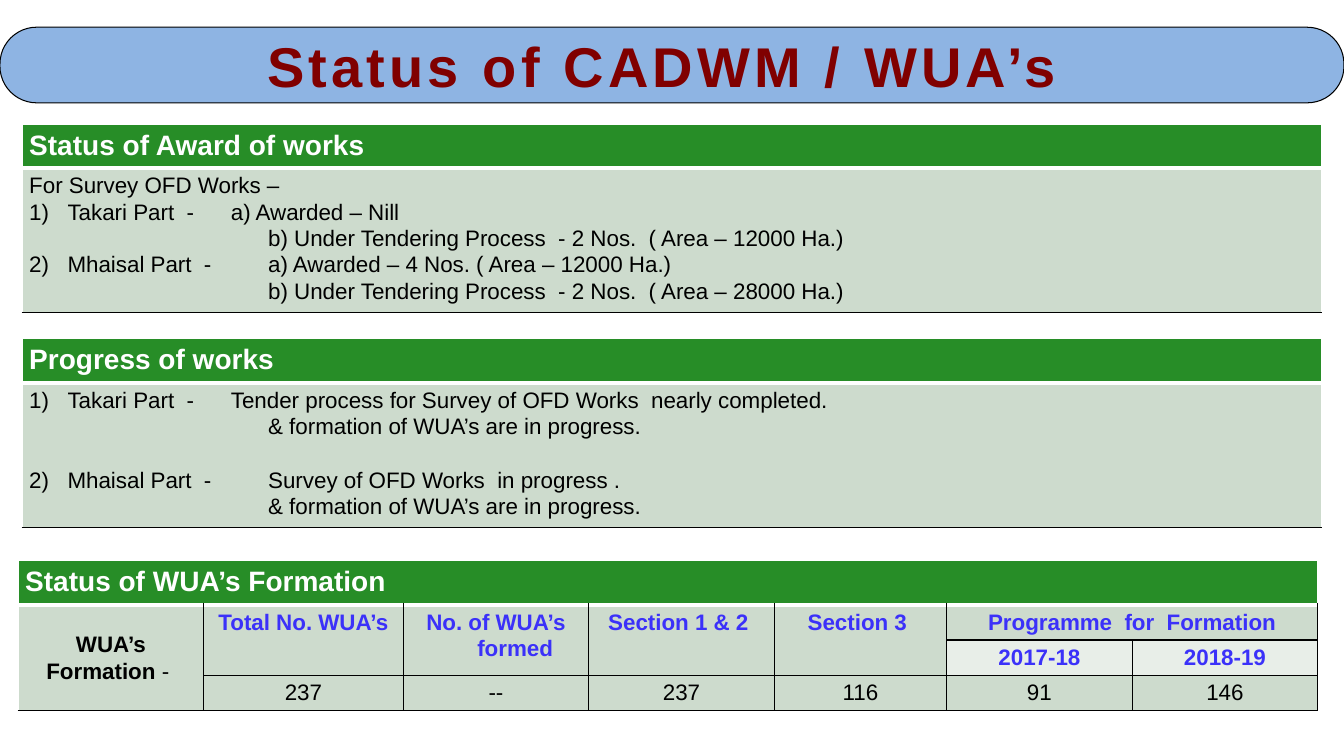
from lxml import etree
from pptx import Presentation
from pptx import util as u
from pptx.dml.color import RGBColor
from pptx.enum import shapes, text
from pptx.oxml import ns

COLOURS = {
    "banner": "8EB4E3", "title": "800000", "header": "278D27", "body": "CDDBCD",
    "years": "E8EEE8", "heading": "3B31F9", "black": "000000", "white": "FFFFFF",
}
FONT = "Arial"
HANG = 0.38        # hanging indent of numbered lines, inches
LINE_SPACING = 1.06
LINE = 19.5        # height of one body line, points
DETAIL = 2.37      # left edge of the detail lines, inches
HEADER_H = 0.44
ROW_H = 0.35
WHITE_GRID = {"L": ("white", 1), "R": ("white", 1), "T": ("white", 1), "B": ("white", 3)}
BLACK_GRID = {side: ("black", 1) for side in "LRTB"}
BODY_GRID = {**WHITE_GRID, "B": ("black", 1)}
LABEL_GRID = {**BODY_GRID, "R": ("black", 1)}


def colour(name):
    return RGBColor.from_string(COLOURS[name])


def style_run(run, size, ink, bold):
    font = run.font
    font.name, font.size, font.bold = FONT, u.Pt(size), bold
    font.color.rgb = colour(ink)


def style_paragraph(paragraph, size, ink, bold, align=None, left=HANG, hang=HANG):
    paragraph.alignment = align
    paragraph.line_spacing = LINE_SPACING
    props = paragraph._p.get_or_add_pPr()
    props.set("marL", str(u.Inches(left)))
    props.set("indent", str(-u.Inches(hang)))
    for run in paragraph.runs:
        style_run(run, size, ink, bold)


def number_and_tab(paragraph, number, tab):
    """Automatic number "n)" and one tab stop."""
    props = paragraph._p.get_or_add_pPr()
    etree.SubElement(props, ns.qn("a:buFont"), typeface="+mj-lt")
    etree.SubElement(props, ns.qn("a:buAutoNum"), type="arabicParenR", startAt=str(number))
    stops = etree.SubElement(props, ns.qn("a:tabLst"))
    etree.SubElement(stops, ns.qn("a:tab"), pos=str(u.Inches(tab)), algn="l")


def style_cell(cell, fill, grid):
    cell.margin_left = cell.margin_right = u.Inches(0.07)
    cell.margin_top = cell.margin_bottom = u.Inches(0.04)
    cell.fill.solid()
    cell.fill.fore_color.rgb = colour(fill)
    props = cell._tc.get_or_add_tcPr()
    for place, side in enumerate("LRTB"):
        ink, width = grid[side]
        border = etree.Element(ns.qn(f"a:ln{side}"), w=str(u.Pt(width)))
        solid = etree.SubElement(border, ns.qn("a:solidFill"))
        etree.SubElement(solid, ns.qn("a:srgbClr"), val=COLOURS[ink])
        props.insert(place, border)


def new_table(slide, box, heights, widths):
    left, top, width = box
    frame = slide.shapes.add_table(
        len(heights), len(widths), u.Inches(left), u.Inches(top),
        u.Inches(width), u.Inches(sum(heights)))
    table = frame.table
    table.horz_banding = False
    for row, height in zip(table.rows, heights):
        row.height = u.Inches(height)
    for column, share in zip(table.columns, widths):
        column.width = u.Inches(width * share / sum(widths))
    return table


def header_cell(cell, heading):
    cell.text_frame.text = heading
    style_paragraph(cell.text_frame.paragraphs[0], 20, "white", True)


def title_banner(slide, box, heading):
    banner = slide.shapes.add_shape(
        shapes.MSO_SHAPE.ROUNDED_RECTANGLE, *(u.Inches(length) for length in box))
    banner.adjustments[0] = 0.485
    banner.shadow.inherit = False
    banner.fill.solid()
    banner.fill.fore_color.rgb = colour("banner")
    banner.line.color.rgb = colour("black")
    banner.line.width = u.Pt(0.75)
    frame = banner.text_frame
    frame.text = heading
    frame.vertical_anchor = text.MSO_ANCHOR.MIDDLE
    frame.paragraphs[0].alignment = text.PP_ALIGN.CENTER
    run = frame.paragraphs[0].runs[0]
    style_run(run, 40, "title", True)
    run.font._element.set("spc", "300")


def works_table(slide, box, heading, lines):
    """lines: (wording, item number, left edge or tab stop, space before)."""
    table = new_table(slide, box, [HEADER_H, 1.43], [1])
    header, body = table.cell(0, 0), table.cell(1, 0)
    style_cell(header, "header", WHITE_GRID)
    header_cell(header, heading)
    style_cell(body, "body", BODY_GRID)
    body.text_frame.text = "\n".join(line[0] for line in lines)
    for paragraph, (_, number, edge, before) in zip(body.text_frame.paragraphs, lines):
        if number:
            number_and_tab(paragraph, number, edge)
            style_paragraph(paragraph, 16, "black", False)
        else:
            style_paragraph(paragraph, 16, "black", False, left=edge, hang=0)
        if before:
            paragraph.space_before = u.Pt(before)


def formation_table(slide, box, heading, label, headings, years, values):
    table = new_table(slide, box, [HEADER_H] + [ROW_H] * 3,
                      [1.84, 1.98, 1.84, 1.84, 1.71, 1.84, 1.84])
    last = len(values)
    # Fills and borders
    for r in range(4):
        for c in range(last + 1):
            if r == 0:
                look = "header", WHITE_GRID
            elif c == 0:
                look = "body", LABEL_GRID
            else:
                look = "years" if r == 2 and c >= last - 1 else "body", BLACK_GRID
            style_cell(table.cell(r, c), *look)
    # Merged areas
    table.cell(0, 0).merge(table.cell(0, last))
    table.cell(1, 0).merge(table.cell(3, 0))
    for c in range(1, last - 1):
        table.cell(1, c).merge(table.cell(2, c))
    table.cell(1, last - 1).merge(table.cell(1, last))
    # Wording
    header_cell(table.cell(0, 0), heading)
    name = table.cell(1, 0)
    name.vertical_anchor = text.MSO_ANCHOR.MIDDLE
    paragraph = name.text_frame.paragraphs[0]
    for part in label:
        paragraph.add_run().text = part
    style_paragraph(paragraph, 16, "black", True, text.PP_ALIGN.CENTER, 0, 0)
    paragraph.runs[-1].font.bold = False
    rows = [(1, 1, headings, "heading", True), (2, last - 1, years, "heading", True),
            (3, 1, values, "black", False)]
    for r, first, words, ink, bold in rows:
        for c, word in enumerate(words, first):
            frame = table.cell(r, c).text_frame
            frame.text = word
            hang = 0 if (r, c) == (1, 1) else HANG
            style_paragraph(frame.paragraphs[0], 16, ink, bold,
                            text.PP_ALIGN.CENTER, hang, hang)


def main():
    deck = Presentation()
    deck.slide_width, deck.slide_height = u.Inches(13.33), u.Inches(7.5)
    slide = deck.slides.add_slide(deck.slide_layouts[6])
    title_banner(slide, (0, 0.27, 13.33, 0.75), "Status of CADWM / WUA’s ")
    works_table(slide, (0.22, 1.23, 12.89), "Status of Award of works", [
        ("For Survey OFD Works –", None, 0, 0),
        ("Takari Part  -\ta) Awarded – Nill", 1, 2, 0),
        ("b) Under Tendering Process  - 2 Nos.  ( Area – 12000 Ha.)", None, DETAIL, 0),
        ("Mhaisal Part  -\ta) Awarded – 4 Nos. ( Area – 12000 Ha.)", 2, DETAIL, 0),
        ("b) Under Tendering Process  - 2 Nos.  ( Area – 28000 Ha.)", None, DETAIL, 0),
    ])
    works_table(slide, (0.22, 3.36, 12.89), "Progress of works", [
        ("Takari Part  -\tTender process for Survey of OFD Works  nearly completed.", 1, 2, 0),
        ("& formation of WUA’s are in progress.", None, DETAIL, 0),
        ("Mhaisal Part  -\tSurvey of OFD Works  in progress .", 2, DETAIL, LINE),
        ("& formation of WUA’s are in progress.", None, DETAIL, 0),
    ])
    formation_table(
        slide, (0.18, 5.56, 12.89), "Status of WUA’s Formation",
        ["WUA’s Formation ", "- "],
        ["Total No. WUA’s", "No. of WUA’s formed", "Section 1 & 2 ", "Section 3 ",
         "Programme  for  Formation"],
        ["2017-18", "2018-19"], ["237", "--", "237", "116", "91", "146"])
    deck.save("out.pptx")


if __name__ == "__main__":
    main()
